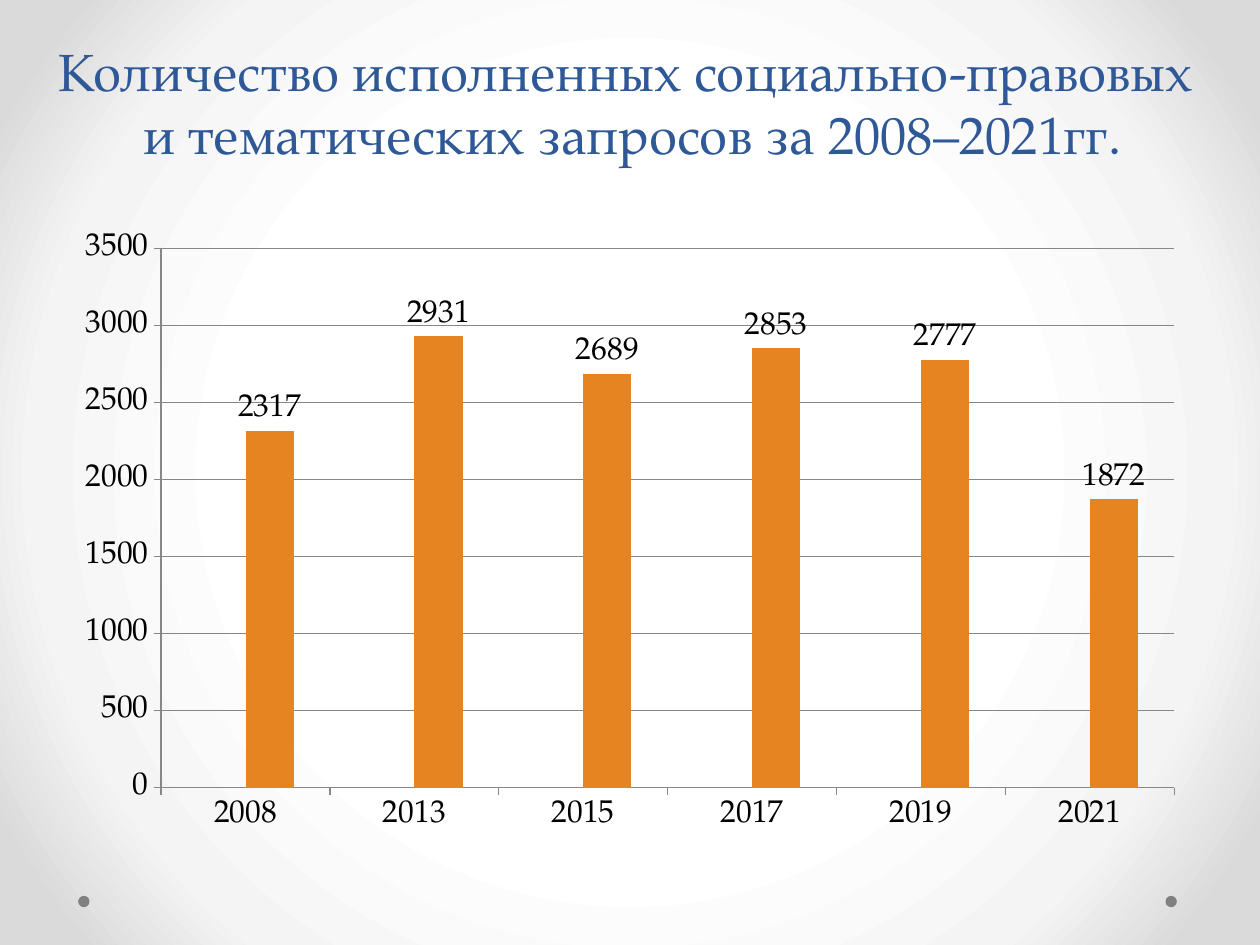
from lxml.etree import SubElement
from pptx import Presentation
from pptx.chart.data import CategoryChartData
from pptx.dml.color import RGBColor
from pptx.enum.chart import XL_CHART_TYPE, XL_LABEL_POSITION, XL_TICK_MARK
from pptx.enum.shapes import MSO_SHAPE
from pptx.enum.text import MSO_ANCHOR, MSO_AUTO_SIZE, PP_ALIGN
from pptx.oxml.ns import qn
from pptx.util import Inches, Pt

FONT = "TeX Gyre Pagella"
TITLE_BLUE = RGBColor(0x2F, 0x58, 0x97)
SERIES_BLUE = RGBColor(0x60, 0x76, 0xB4)
SERIES_ORANGE = RGBColor(0xE6, 0x84, 0x22)
DOT_GRAY = RGBColor(0x80, 0x80, 0x80)
AXIS_GRAY = RGBColor(0x87, 0x87, 0x87)
BLACK = RGBColor(0, 0, 0)
BACKGROUND_STOPS = (
    (50, RGBColor(0xFF, 0xFF, 0xFF)),
    (76, RGBColor(0xF4, 0xF4, 0xF4)),
    (92, RGBColor(0xDA, 0xDA, 0xDA)),
)
TITLE_LINES = (
    "Количество исполненных социально-правовых ",
    "и тематических запросов за 2008–2021гг.",
)
YEARS = ("2008", "2013", "2015", "2017", "2019", "2021")
REQUESTS = (2317, 2931, 2689, 2853, 2777, 1872)


def set_background(slide):
    """Fill the background with a circular gradient around the centre."""
    slide.background.fill.gradient()
    gradient = slide.element.find(".//" + qn("a:gradFill"))
    for child in list(gradient):
        gradient.remove(child)
    stops = SubElement(gradient, qn("a:gsLst"))
    for position, color in BACKGROUND_STOPS:
        stop = SubElement(stops, qn("a:gs"), pos=str(position * 1000))
        SubElement(stop, qn("a:srgbClr"), val=str(color))
    circle = SubElement(gradient, qn("a:path"), {"path": "circle"})
    SubElement(circle, qn("a:fillToRect"), l="50000", t="50000", r="50000", b="50000")


def add_dot(slide, left, top):
    """Add a small gray decorative dot."""
    size = Inches(0.09)
    dot = slide.shapes.add_shape(MSO_SHAPE.OVAL, Inches(left), Inches(top), size, size)
    dot.shadow.inherit = False
    dot.fill.solid()
    dot.fill.fore_color.rgb = DOT_GRAY
    dot.line.fill.background()


def set_title(slide):
    """Place and write the two-line title."""
    title = slide.shapes.title
    title.left, title.top = Inches(0.02), Inches(0.21)
    title.width, title.height = Inches(10), Inches(1.15)
    frame = title.text_frame
    frame.word_wrap = True
    frame.auto_size = MSO_AUTO_SIZE.NONE
    frame.vertical_anchor = MSO_ANCHOR.BOTTOM
    paragraph = frame.paragraphs[0]
    paragraph.alignment = PP_ALIGN.CENTER
    for index, line in enumerate(TITLE_LINES):
        if index:
            paragraph.add_line_break()
        run = paragraph.add_run()
        run.text = line
        run.font.name = FONT
        run.font.size = Pt(30)
        run.font.color.rgb = TITLE_BLUE


def format_line(line):
    """Give an axis or grid line its thin gray look."""
    line.color.rgb = AXIS_GRAY
    line.width = Pt(0.75)


def add_requests_chart(slide):
    """Add the column chart of completed requests by year."""
    data = CategoryChartData()
    data.categories = YEARS
    data.add_series("Series 1", [None] * len(YEARS))
    data.add_series("Series 2", REQUESTS)
    chart = slide.shapes.add_chart(
        XL_CHART_TYPE.COLUMN_CLUSTERED,
        Inches(0.5), Inches(1.75), Inches(9), Inches(4.95), data,
    ).chart
    chart.has_title = False
    chart.has_legend = False
    chart.font.name = FONT
    chart.font.size = Pt(18)
    chart.font.color.rgb = BLACK
    for axis in (chart.category_axis, chart.value_axis):
        axis.major_tick_mark = XL_TICK_MARK.OUTSIDE
        axis.minor_tick_mark = XL_TICK_MARK.NONE
        format_line(axis.format.line)
    value_axis = chart.value_axis
    value_axis.minimum_scale, value_axis.maximum_scale = 0, 3500
    value_axis.major_unit = 500
    value_axis.has_major_gridlines = True
    format_line(value_axis.major_gridlines.format.line)
    plot = chart.plots[0]
    plot.gap_width = 150
    plot.overlap = 0
    plot.vary_by_categories = False
    for series, color in zip(plot.series, (SERIES_BLUE, SERIES_ORANGE)):
        series.format.fill.solid()
        series.format.fill.fore_color.rgb = color
    labels = plot.series[1].data_labels
    labels.show_value = True
    labels.position = XL_LABEL_POSITION.OUTSIDE_END


def main():
    """Build and save the slide."""
    presentation = Presentation()
    presentation.slide_width, presentation.slide_height = Inches(10), Inches(7.5)
    slide = presentation.slides.add_slide(presentation.slide_layouts[5])
    set_background(slide)
    for left in (9.25, 0.62):
        add_dot(slide, left, 7.11)
    set_title(slide)
    add_requests_chart(slide)
    presentation.save("out.pptx")


if __name__ == "__main__":
    main()
